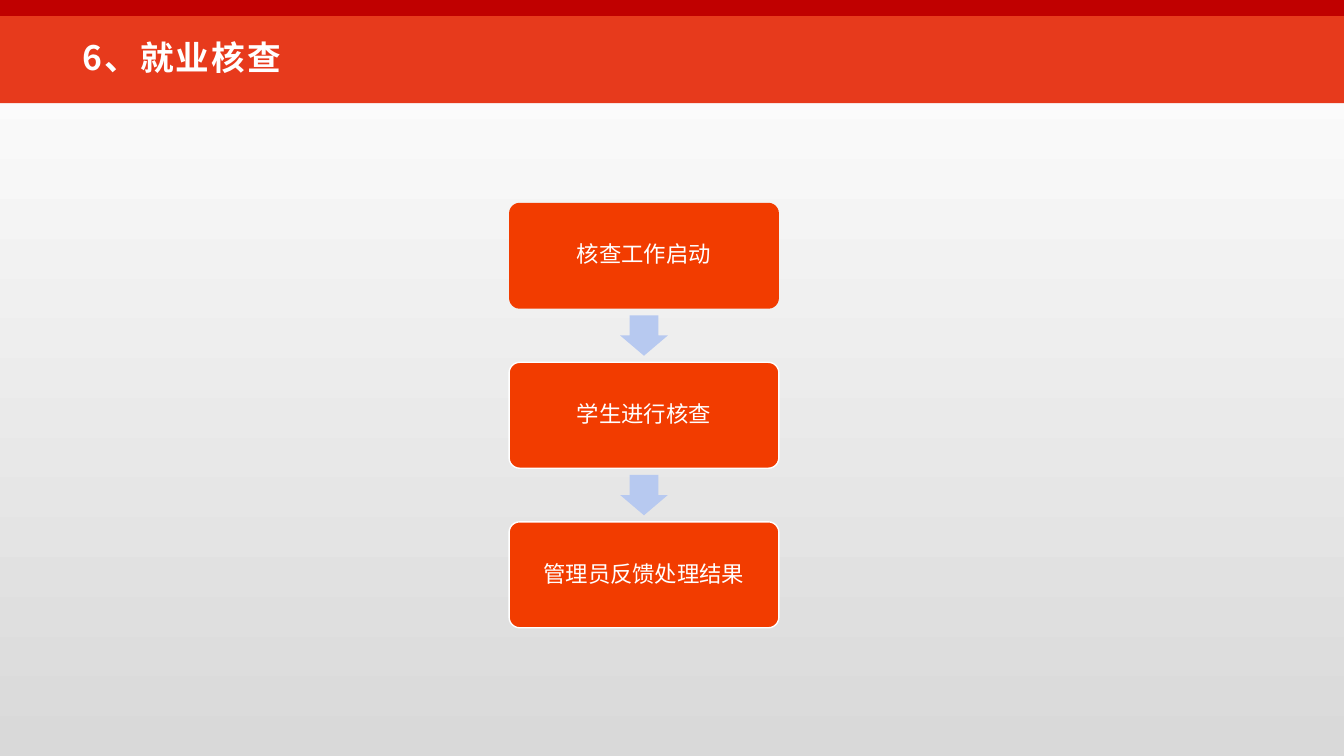
"""Build the employment verification flow slide."""
from lxml import etree
from pptx import Presentation
from pptx import util as u
from pptx.dml.color import RGBColor
from pptx.enum import shapes, text
from pptx.oxml.ns import qn

TITLE = "6、就业核查"
STEPS = ["核查工作启动", "学生进行核查", "管理员反馈处理结果"]
FONT = "Noto Sans CJK SC"
COLORS = {
    "white": "FFFFFF",
    "grey": "D9D9D9",
    "banner": "E73A1C",
    "stripe": "C00000",
    "step": "F23C00",
    "arrow": "B7C9F0",
}
SLIDE_WIDTH, SLIDE_HEIGHT = u.Cm(33.87), u.Cm(19.05)
STEP_LEFT, STEP_TOP = u.Cm(12.83), u.Cm(5.11)
STEP_WIDTH, STEP_HEIGHT = u.Cm(6.8), u.Cm(2.67)
STEP_PITCH = u.Cm(4.02)
ARROW_WIDTH, ARROW_HEIGHT = u.Cm(1.2), u.Cm(1.02)


def color(name):
    return RGBColor.from_string(COLORS[name])


def add_block(slide, kind, left, top, width, height, fill, adjustments=()):
    shape = slide.shapes.add_shape(kind, left, top, width, height)
    shape.shadow.inherit = False
    shape.fill.solid()
    shape.fill.fore_color.rgb = color(fill)
    shape.line.fill.background()
    for index, value in enumerate(adjustments):
        shape.adjustments[index] = value
    return shape


def write(shape, content, size, bold=False):
    frame = shape.text_frame
    frame.text = content
    frame.word_wrap = True
    frame.vertical_anchor = text.MSO_ANCHOR.MIDDLE
    paragraph = frame.paragraphs[0]
    font = paragraph.runs[0].font
    font.name, font.size, font.bold = FONT, u.Pt(size), bold
    font.color.rgb = color("white")
    properties = paragraph.runs[0]._r.get_or_add_rPr()
    etree.SubElement(properties, qn("a:ea"), typeface=FONT)
    return paragraph


def add_header(slide):
    for height, fill in ((u.Cm(2.6), "banner"), (u.Cm(0.4), "stripe")):
        add_block(slide, shapes.MSO_SHAPE.RECTANGLE, 0, 0, SLIDE_WIDTH, height, fill)
    title = slide.shapes.add_textbox(u.Cm(1.83), u.Cm(0.71), u.Cm(20.42), u.Cm(1.47))
    paragraph = write(title, TITLE, 24, bold=True)
    paragraph.runs[0]._r.get_or_add_rPr().set("spc", "150")


def add_flow(slide):
    arrow_left = STEP_LEFT + (STEP_WIDTH - ARROW_WIDTH) // 2
    arrow_offset = (STEP_HEIGHT + STEP_PITCH - ARROW_HEIGHT) // 2
    for index, label in enumerate(STEPS):
        top = STEP_TOP + index * STEP_PITCH
        step = add_block(slide, shapes.MSO_SHAPE.ROUNDED_RECTANGLE, STEP_LEFT, top,
                         STEP_WIDTH, STEP_HEIGHT, "step", [0.1])
        paragraph = write(step, label, 16)
        paragraph.alignment = text.PP_ALIGN.CENTER
        paragraph.line_spacing = 0.9
        if index:
            step.line.color.rgb = color("white")
            step.line.width = u.Pt(1)
        if index < len(STEPS) - 1:
            add_block(slide, shapes.MSO_SHAPE.DOWN_ARROW, arrow_left, top + arrow_offset,
                      ARROW_WIDTH, ARROW_HEIGHT, "arrow", [0.6, 0.5])


def main():
    presentation = Presentation()
    presentation.slide_width, presentation.slide_height = SLIDE_WIDTH, SLIDE_HEIGHT
    slide = presentation.slides.add_slide(presentation.slide_layouts[6])
    background = slide.background.fill
    background.gradient()
    background.gradient_angle = 270
    for stop, name in zip(background.gradient_stops, ("white", "grey")):
        stop.color.rgb = color(name)
    add_header(slide)
    add_flow(slide)
    presentation.save("out.pptx")


if __name__ == "__main__":
    main()
